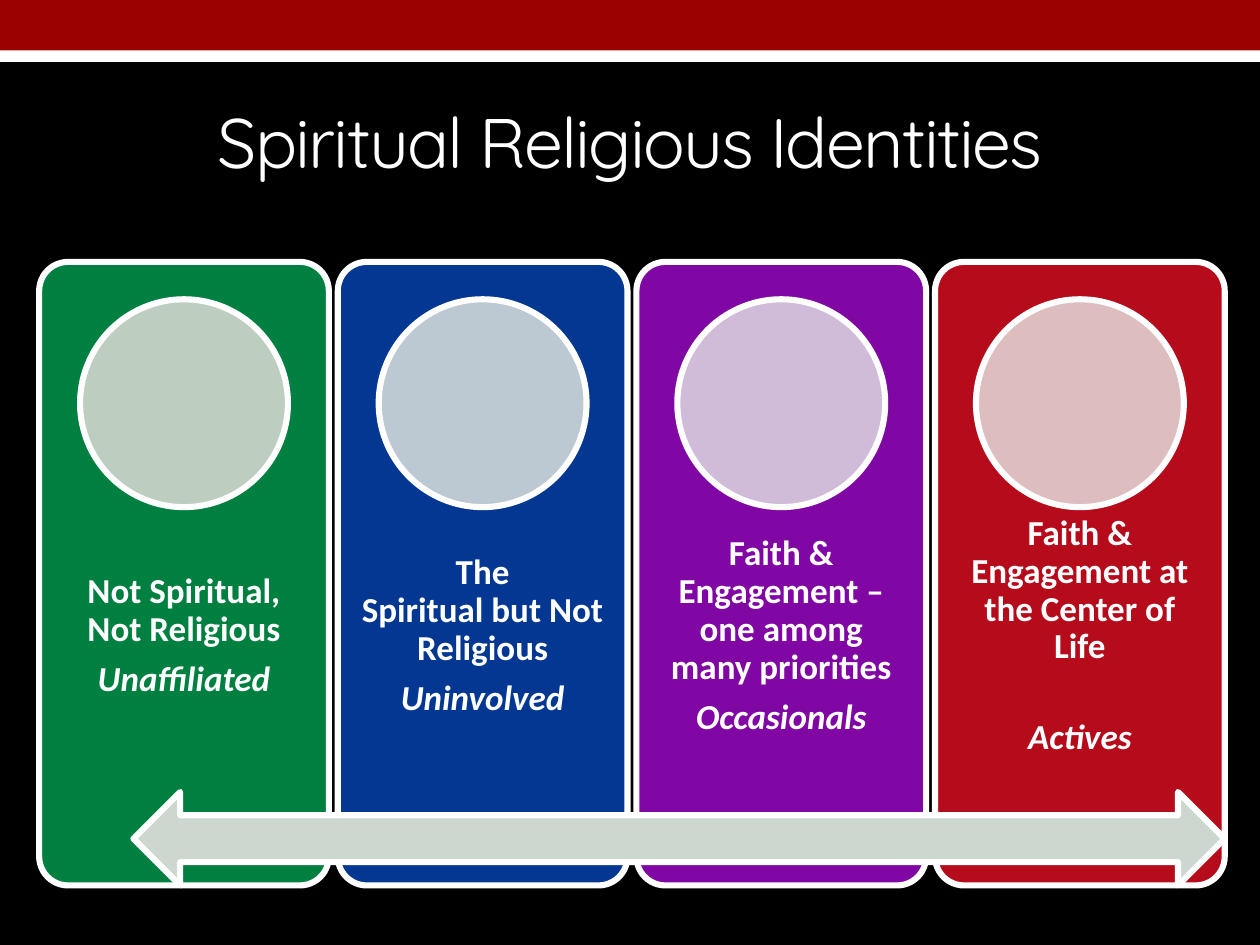
from pptx import Presentation
from pptx.dml.color import RGBColor
from pptx.enum.shapes import MSO_SHAPE
from pptx.enum.text import MSO_ANCHOR, PP_ALIGN
from pptx.util import Cm, Pt

RECT, ROUND_RECT = MSO_SHAPE.RECTANGLE, MSO_SHAPE.ROUNDED_RECTANGLE
OVAL, DOUBLE_ARROW = MSO_SHAPE.OVAL, MSO_SHAPE.LEFT_RIGHT_ARROW
MIDDLE, CENTER = MSO_ANCHOR.MIDDLE, PP_ALIGN.CENTER

BLACK = RGBColor(0x00, 0x00, 0x00)
WHITE = RGBColor(0xFF, 0xFF, 0xFF)
BAND_RED = RGBColor(0x9B, 0x01, 0x01)
GREEN = RGBColor(0x00, 0x80, 0x40)
BLUE = RGBColor(0x03, 0x37, 0x92)
PURPLE = RGBColor(0x80, 0x07, 0xA4)
RED = RGBColor(0xB5, 0x0B, 0x1B)
PALE_GREEN = RGBColor(0xBD, 0xCD, 0xC0)
PALE_BLUE = RGBColor(0xBC, 0xC9, 0xD3)
PALE_PURPLE = RGBColor(0xD0, 0xBC, 0xD9)
PALE_RED = RGBColor(0xDE, 0xBD, 0xBF)
ARROW_GREY = RGBColor(0xCC, 0xD8, 0xCF)

SLIDE_W, SLIDE_H = 25.4, 19.05
CARD_W, CARD_H, CARD_PITCH = 5.84, 12.57, 6.02

# card colour, circle colour, description, group name, points between the two
IDENTITIES = [
    (GREEN, PALE_GREEN, "Not Spiritual, Not Religious", "Unaffiliated", 7),
    (BLUE, PALE_BLUE, "The\vSpiritual but Not Religious", "Uninvolved", 7),
    (PURPLE, PALE_PURPLE, "Faith & Engagement – one among many priorities",
     "Occasionals", 7),
    (RED, PALE_RED, "Faith & Engagement at the Center of Life", "Actives", 30),
]


def add_filled(slide, kind, x, y, w, h, fill, outlined=True):
    s = slide.shapes.add_shape(kind, Cm(x), Cm(y), Cm(w), Cm(h))
    s.shadow.inherit = False
    s.fill.solid()
    s.fill.fore_color.rgb = fill
    if outlined:
        s.line.color.rgb = WHITE
        s.line.width = Pt(3.5)
    else:
        s.line.fill.background()
    return s


def add_text_frame(slide, x, y, w, h, margin):
    tf = slide.shapes.add_textbox(Cm(x), Cm(y), Cm(w), Cm(h)).text_frame
    frame_format = {"word_wrap": True, "vertical_anchor": MIDDLE}
    for side in ("left", "top", "right", "bottom"):
        frame_format[f"margin_{side}"] = Cm(margin)
    for name, value in frame_format.items():
        setattr(tf, name, value)
    return tf


def write_paragraph(p, text, size, font, **extra):
    p.text = text
    p.alignment = CENTER
    for r in p.runs:
        r.font.color.rgb = WHITE
        for name, value in {"size": Pt(size), "name": font, **extra}.items():
            setattr(r.font, name, value)


def add_header(slide, x, y, w):
    add_filled(slide, RECT, x, y + 0.61, w, 0.64, WHITE, outlined=False)
    add_filled(slide, RECT, x, y, w, 1.02, BAND_RED, outlined=False)
    tf = add_text_frame(slide, x, y + 1.47, w, 2.74, 0.25)
    p = tf.paragraphs[0]
    write_paragraph(p, "Spiritual Religious Identities", 40, "Quicksand")
    p.runs[0].font._element.set("spc", "-100")


def add_card(slide, x, y, w, h, identity):
    fill, circle_fill, description, group, gap = identity
    card = add_filled(slide, ROUND_RECT, x, y, w, h, fill)
    card.adjustments[0] = 0.1

    text_h = 0.4 * h
    tf = add_text_frame(slide, x, y + text_h, w, text_h, 0.41)
    p = tf.paragraphs[0]
    write_paragraph(p, description, 20, "Calibri", bold=True)
    p.space_after = Pt(gap)
    name = tf.add_paragraph()
    write_paragraph(name, group, 20, "Calibri", bold=True, italic=True)
    name.space_after = Pt(7)
    for p in tf.paragraphs:
        p.line_spacing = 0.9

    d = h / 3
    add_filled(slide, OVAL, x + (w - d) / 2, y + 0.06 * h, d, d, circle_fill)


def add_identities(slide, x, y):
    for i, identity in enumerate(IDENTITIES):
        add_card(slide, x + i * CARD_PITCH, y, CARD_W, CARD_H, identity)
    arrow_h = 0.15 * CARD_H
    add_filled(slide, DOUBLE_ARROW, x + 1.9, y + CARD_H - arrow_h, 22, arrow_h,
               ARROW_GREY)


def main():
    prs = Presentation()
    prs.slide_width, prs.slide_height = Cm(SLIDE_W), Cm(SLIDE_H)
    slide = prs.slides.add_slide(prs.slide_layouts[6])
    slide.background.fill.solid()
    slide.background.fill.fore_color.rgb = BLACK
    add_header(slide, 0, 0, SLIDE_W)
    add_identities(slide, 0.79, 5.28)
    prs.save("out.pptx")


if __name__ == "__main__":
    main()
